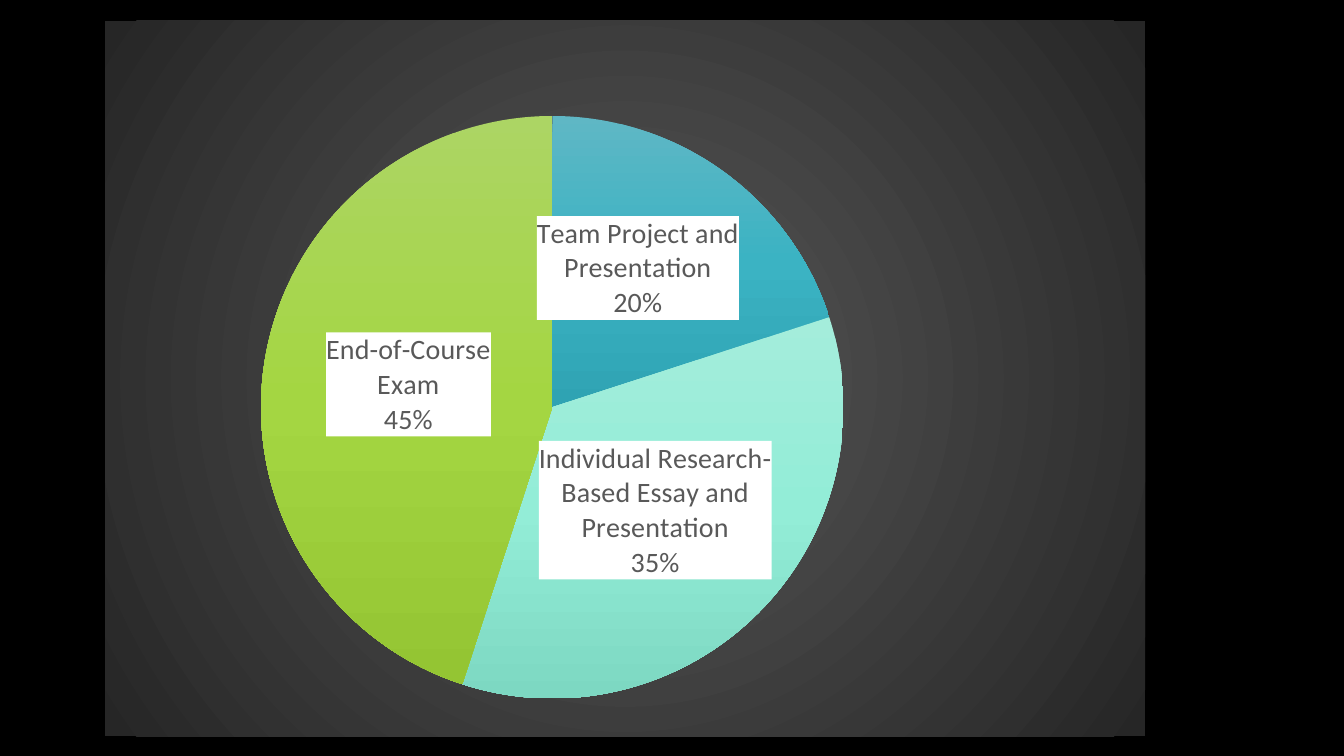
from copy import deepcopy
from dataclasses import dataclass

from lxml.etree import _Element
from pptx import Presentation
from pptx.chart.data import CategoryChartData
from pptx.dml.color import RGBColor
from pptx.enum.chart import XL_CHART_TYPE, XL_LABEL_POSITION
from pptx.oxml import parse_xml
from pptx.oxml.ns import nsdecls, qn
from pptx.util import Pt

BLACK = RGBColor(0x00, 0x00, 0x00)
WHITE = RGBColor(0xFF, 0xFF, 0xFF)
GREY = RGBColor(0x59, 0x59, 0x59)
DARK = RGBColor(0x26, 0x26, 0x26)
FONT = "Calibri"
DOWN = '<a:lin ang="5400000" scaled="0"/>'
ROUND = ('<a:path path="circle"><a:fillToRect l="50000" t="50000" '
         'r="50000" b="50000"/></a:path>')


@dataclass
class Slice:
    name: str
    share: int
    shades: tuple[RGBColor, ...]


SLICES = [
    Slice("Team Project and Presentation", 20,
          (RGBColor(0x5F, 0xB7, 0xC5), RGBColor(0x3B, 0xB3, 0xC3), RGBColor(0x2F, 0xA3, 0xB3))),
    Slice("Individual Research-Based Essay and Presentation", 35,
          (RGBColor(0xA4, 0xED, 0xDB), RGBColor(0x93, 0xED, 0xD7), RGBColor(0x7D, 0xD8, 0xC2))),
    Slice("End-of-Course Exam", 45,
          (RGBColor(0xAC, 0xD5, 0x64), RGBColor(0xA4, 0xD6, 0x42), RGBColor(0x94, 0xC5, 0x33))),
]


def blend(shades: tuple[RGBColor, ...], course: str) -> _Element:
    """Return a gradient fill with evenly spaced stops."""
    step = 100000 // (len(shades) - 1)
    stops = "".join(f'<a:gs pos="{i * step}"><a:srgbClr val="{shade}"/></a:gs>'
                    for i, shade in enumerate(shades))
    return parse_xml(f'<a:gradFill {nsdecls("a")} rotWithShape="1">'
                     f'<a:gsLst>{stops}</a:gsLst>{course}</a:gradFill>')


def panel(fill: _Element) -> _Element:
    """Return borderless shape properties with the given fill."""
    props = parse_xml(f'<c:spPr {nsdecls("c", "a")}><a:ln><a:noFill/></a:ln></c:spPr>')
    props.insert(0, fill)
    return props


def place(**parts: float | str) -> _Element:
    """Return a manual layout, given as fractions of the chart."""
    items = "".join(f'<c:{key} val="{val}"/>' for key, val in parts.items())
    return parse_xml(f'<c:layout {nsdecls("c")}><c:manualLayout>{items}'
                     '</c:manualLayout></c:layout>')


def label(series) -> None:
    tags = series.data_labels
    tags.show_value = False
    tags.show_category_name = True
    tags.show_percentage = True
    tags.position = XL_LABEL_POSITION.CENTER
    tags.font.size = Pt(20)
    tags.font.name = FONT
    tags.font.color.rgb = GREY
    root = tags._element
    white = parse_xml(f'<a:solidFill {nsdecls("a")}><a:srgbClr val="{WHITE}"/></a:solidFill>')
    root.find(qn("c:txPr")).addprevious(panel(white))
    # The first label sits a little above the middle of its slice.
    first = parse_xml(f'<c:dLbl {nsdecls("c")}><c:idx val="0"/></c:dLbl>')
    first.append(place(x=0, y=-0.03))
    for part in root:
        if part.tag != qn("c:showLeaderLines"):
            first.append(deepcopy(part))
    root.insert(0, first)


def draw(slide) -> None:
    data = CategoryChartData()
    data.categories = [item.name for item in SLICES]
    data.add_series("Series 1", [item.share for item in SLICES])
    chart = slide.shapes.add_chart(XL_CHART_TYPE.PIE, Pt(75), Pt(15),
                                   Pt(743), Pt(511), data).chart
    chart.has_title = False
    chart.has_legend = False
    chart.font.size = Pt(10)
    chart.font.name = FONT
    chart.font.color.rgb = WHITE
    space = chart._chartSpace
    space.find(qn("c:txPr")).addprevious(panel(blend((GREY, DARK), ROUND)))

    area = space.chart.plotArea
    for old in area.findall(qn("c:layout")):
        area.remove(old)
    area.insert(0, place(layoutTarget="inner", xMode="edge", yMode="edge",
                         x=0.15, y=0.13, w=0.56, h=0.82))

    plot = chart.plots[0]
    plot.vary_by_categories = True
    series = plot.series[0]
    for i, item in enumerate(SLICES):
        style = series.points[i].format
        style.line.fill.background()
        style._element.get_or_add_spPr().insert(0, blend(item.shades, DOWN))
    label(series)


def main() -> None:
    deck = Presentation()
    deck.slide_width, deck.slide_height = Pt(960), Pt(540)
    slide = deck.slides.add_slide(deck.slide_layouts[6])
    slide.background.fill.solid()
    slide.background.fill.fore_color.rgb = BLACK
    draw(slide)
    deck.save("out.pptx")


if __name__ == "__main__":
    main()
